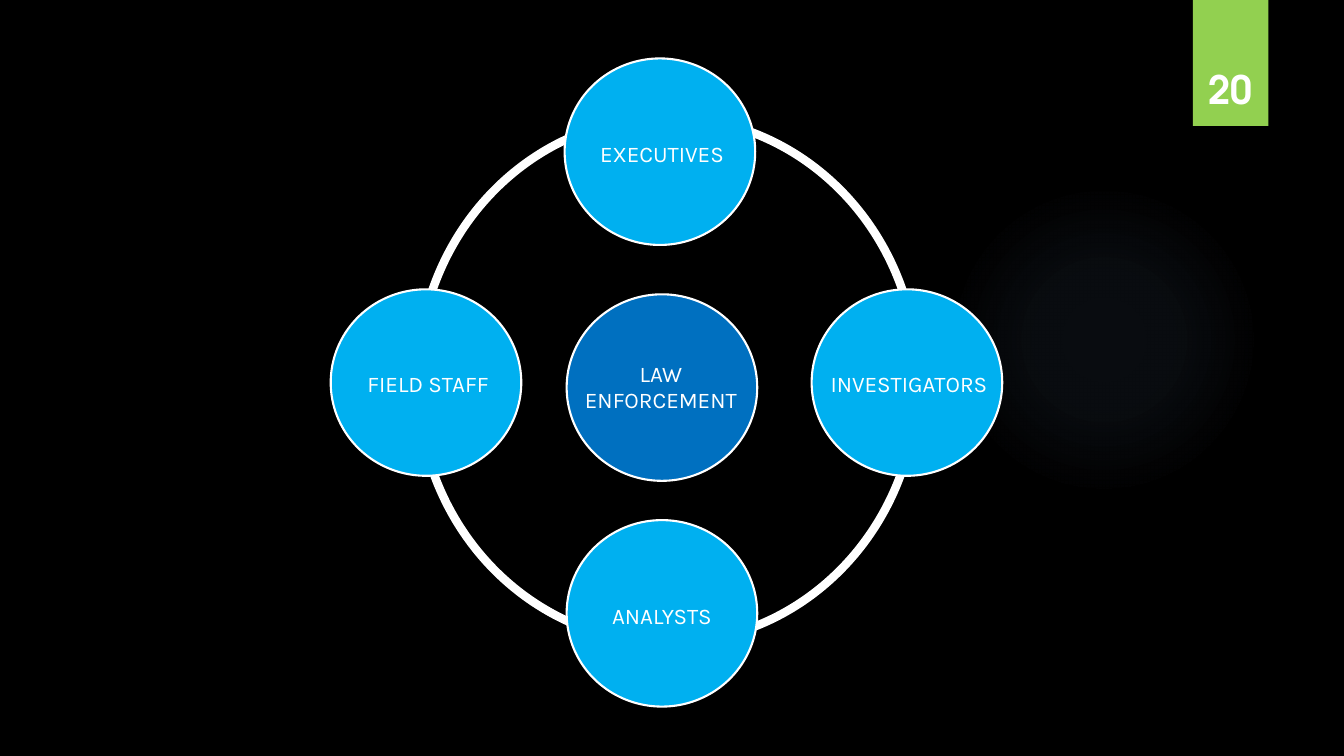
from dataclasses import dataclass

from lxml.etree import SubElement
from pptx import Presentation
from pptx.dml.color import RGBColor
from pptx.enum.shapes import MSO_SHAPE
from pptx.enum.text import MSO_ANCHOR, PP_ALIGN
from pptx.oxml.ns import qn
from pptx.util import Pt

EMU_PER_PX = 9144
DISC_SIZE = (189, 185)


@dataclass(frozen=True)
class Theme:
    background: str = "000000"
    glow: str = "82B1E5"
    tab: str = "92D050"
    role: str = "00B0F0"
    center: str = "0070C0"
    light: str = "FFFFFF"
    label_font: str = "Karla"
    number_font: str = "TeX Gyre Adventor"
    label_size: int = 16
    number_size: int = 28
    ring_width: float = 6
    disc_width: float = 1.5


THEME = Theme()
LABEL_FORMAT = {"name": THEME.label_font, "size": Pt(THEME.label_size), "bold": False}
NUMBER_FORMAT = {"name": THEME.number_font, "size": Pt(THEME.number_size), "bold": True}
GLOW_STOPS = [(0, 7), (36, 6), (69, 0)]
DISCS = [
    ("EXECUTIVES", THEME.role, (560, 58), (562, 134), 34),
    ("INVESTIGATORS", THEME.role, (805, 287), (807, 362), 34),
    ("FIELD STAFF", THEME.role, (328, 287), (330, 362), 34),
    ("ANALYSTS", THEME.role, (562, 516), (562, 592), 34),
    ("LAW ENFORCEMENT", THEME.center, (562, 292), (561, 352), 64),
]


def px(*lengths):
    return [length * EMU_PER_PX for length in lengths]


def color(value):
    return RGBColor.from_string(value)


def add_figure(slide, kind, box, fill=None, line=None, width=0):
    shape = slide.shapes.add_shape(kind, *px(*box))
    shape.shadow.inherit = False
    if fill:
        shape.fill.solid()
        shape.fill.fore_color.rgb = color(fill)
    else:
        shape.fill.background()
    if line:
        shape.line.color.rgb = color(line)
        shape.line.width = Pt(width)
    else:
        shape.line.fill.background()
    return shape


def add_text(slide, text, box, font_format, anchor=MSO_ANCHOR.TOP):
    frame = slide.shapes.add_textbox(*px(*box)).text_frame
    frame.word_wrap = True
    frame.vertical_anchor = anchor
    paragraph = frame.paragraphs[0]
    paragraph.text = text
    paragraph.alignment = PP_ALIGN.CENTER
    font = paragraph.runs[0].font
    for name, value in font_format.items():
        setattr(font, name, value)
    font.color.rgb = color(THEME.light)


def add_glow(slide, box):
    shape = add_figure(slide, MSO_SHAPE.OVAL, box)
    shape.fill.gradient()
    gradient = shape.element.spPr.find(qn("a:gradFill"))
    for child in list(gradient):
        gradient.remove(child)
    stops = SubElement(gradient, qn("a:gsLst"))
    for position, opacity in GLOW_STOPS:
        stop = SubElement(stops, qn("a:gs"), pos=str(position * 1000))
        stop_color = SubElement(stop, qn("a:srgbClr"), val=THEME.glow)
        SubElement(stop_color, qn("a:alpha"), val=str(opacity * 1000))
    circle = SubElement(gradient, qn("a:path"), path="circle")
    SubElement(circle, qn("a:fillToRect"), dict.fromkeys("ltrb", "50000"))


def add_page_tab(slide, number):
    add_figure(slide, MSO_SHAPE.RECTANGLE, (1183, 0, 75, 125), THEME.tab)
    add_text(slide, number, (1174, 32, 92, 84), NUMBER_FORMAT, MSO_ANCHOR.BOTTOM)


def add_disc(slide, text, fill, corner, label_corner, label_height):
    add_figure(slide, MSO_SHAPE.OVAL, (*corner, *DISC_SIZE), fill, THEME.light, THEME.disc_width)
    add_text(slide, text, (*label_corner, DISC_SIZE[0], label_height), LABEL_FORMAT)


def main():
    presentation = Presentation()
    presentation.slide_width, presentation.slide_height = px(1333, 750)
    slide = presentation.slides.add_slide(presentation.slide_layouts[6])
    slide.background.fill.solid()
    slide.background.fill.fore_color.rgb = color(THEME.background)
    add_glow(slide, (941, 183, 308, 308))
    add_page_tab(slide, "20")
    add_figure(slide, MSO_SHAPE.OVAL, (414, 116, 496, 522), line=THEME.light, width=THEME.ring_width)
    for disc in DISCS:
        add_disc(slide, *disc)
    presentation.save("out.pptx")


if __name__ == "__main__":
    main()
